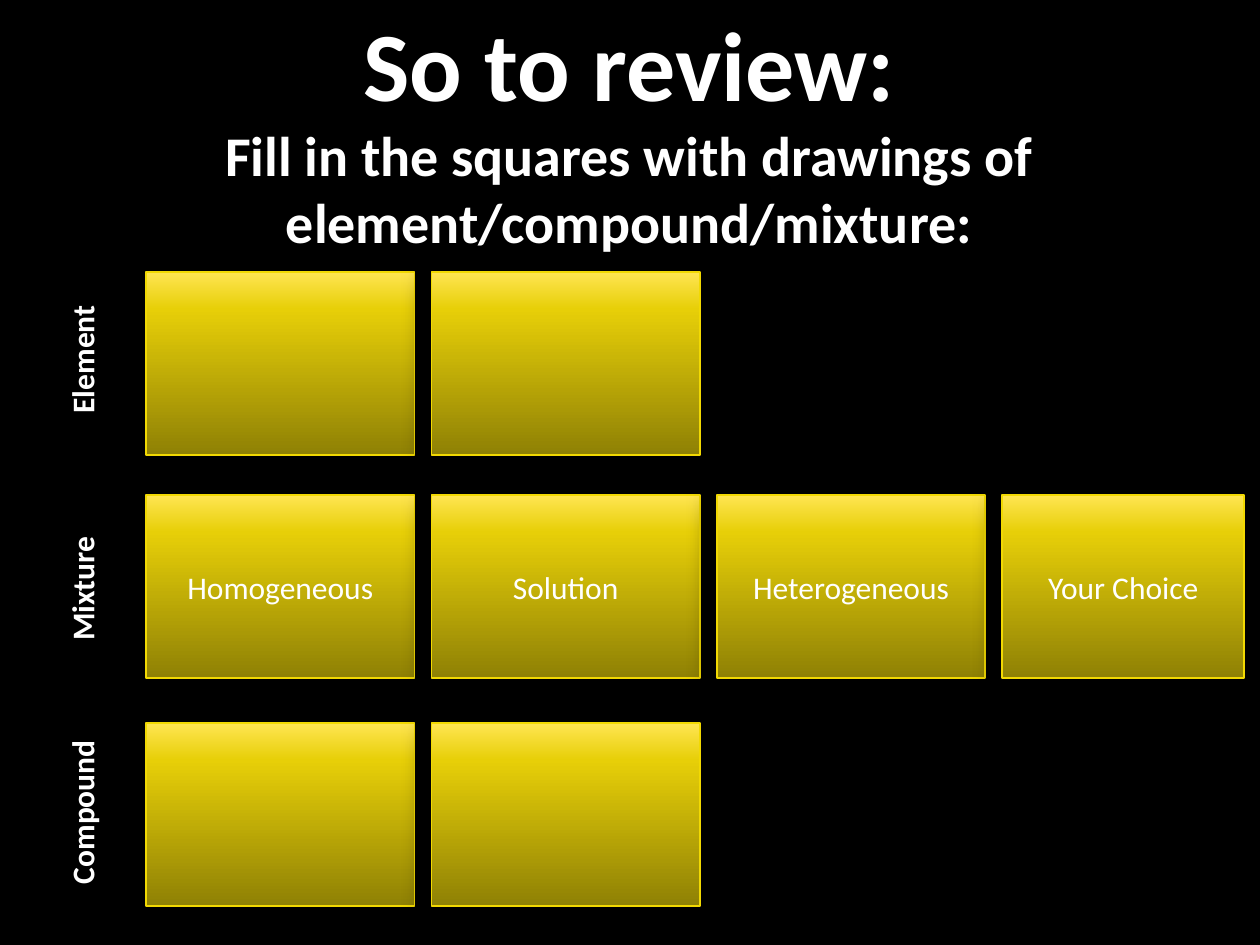
from copy import deepcopy
from lxml.etree import SubElement as Sub
from pptx import Presentation
from pptx.dml.color import RGBColor
from pptx.enum.shapes import MSO_SHAPE as Shape
from pptx.enum.text import MSO_ANCHOR as Anchor, MSO_AUTO_SIZE as Fit, PP_ALIGN as Align
from pptx.oxml.ns import qn
from pptx.util import Inches, Pt


def color(code):
    return RGBColor.from_string(code)


class Deck:
    face = "Calibri"
    ink = "FFFFFF"
    back = "000000"
    edge = "F2D902"
    stops = [(0, "8F8105"), (0.8, "E7CF08"), (1, "FFE552")]

    def __init__(self, slide):
        self.slide = slide
        fill = slide.background.fill
        fill.solid()
        fill.fore_color.rgb = color(self.back)

    def style(self, font, size, bold=False):
        font.name = self.face
        font.size = Pt(size)
        font.bold = bold
        font.color.rgb = color(self.ink)

    def title(self, head, task):
        box = self.slide.shapes.title
        box.left, box.top = Inches(0.85), Inches(0.12)
        box.width, box.height = Inches(8.29), Inches(1.81)
        frame = box.text_frame
        frame.auto_size = Fit.NONE
        frame.word_wrap = True
        frame.vertical_anchor = Anchor.MIDDLE
        para = frame.paragraphs[0]
        para.alignment = Align.CENTER
        run = para.add_run()
        run.text = head
        self.style(run.font, 56, True)
        para.add_line_break()
        run = para.add_run()
        run.text = task
        self.style(run.font, 32, True)

    def label(self, text, mid, width):
        high = 0.4
        box = self.slide.shapes.add_textbox(
            Inches(0.65 - width / 2), Inches(mid - high / 2), Inches(width), Inches(high))
        box.rotation = 270
        frame = box.text_frame
        frame.word_wrap = False
        frame.auto_size = Fit.SHAPE_TO_FIT_TEXT
        para = frame.paragraphs[0]
        para.text = text
        self.style(para.font, 18, True)

    def cell(self, text, left, top, width):
        box = self.slide.shapes.add_shape(
            Shape.RECTANGLE, Inches(left), Inches(top), Inches(width), Inches(1.45))
        self.shade(box)
        box.line.color.rgb = color(self.edge)
        box.line.width = Pt(1)
        self.shadow(box)
        if text:
            frame = box.text_frame
            frame.word_wrap = True
            frame.vertical_anchor = Anchor.MIDDLE
            para = frame.paragraphs[0]
            para.text = text
            para.alignment = Align.CENTER
            self.style(para.font, 18)

    def shade(self, box):
        fill = box.fill
        fill.gradient()
        fill.gradient_angle = 90
        marks = box.element.spPr.find(".//" + qn("a:gsLst"))
        marks.append(deepcopy(marks[-1]))
        for stop, (place, code) in zip(fill.gradient_stops, self.stops):
            stop.position = place
            stop.color.rgb = color(code)

    def shadow(self, box):
        box.shadow.inherit = False
        group = box.element.spPr.find(qn("a:effectLst"))
        cast = Sub(group, qn("a:outerShdw"), blurRad=str(Pt(18)), dist=str(Pt(3)),
                   dir="5400000", rotWithShape="0")
        tint = Sub(cast, qn("a:srgbClr"), val="000000")
        Sub(tint, qn("a:alpha"), val="80000")


def main():
    show = Presentation()
    show.slide_width, show.slide_height = Inches(10), Inches(7.5)
    deck = Deck(show.slides.add_slide(show.slide_layouts[5]))
    deck.title("So to review:",
               "Fill in the squares with drawings of element/compound/mixture:")
    rows = [
        ("Element", 2.83, 1.1, 2.16, ["", ""]),
        ("Mixture", 4.65, 1.07, 3.93,
         ["Homogeneous", "Solution", "Heterogeneous", "Your Choice"]),
        ("Compound", 6.42, 1.39, 5.74, ["", ""]),
    ]
    for name, mid, width, _, _ in rows:
        deck.label(name, mid, width)
    for _, _, _, top, cells in rows:
        for col, text in enumerate(cells):
            deck.cell(text, 1.16 + 2.265 * col, top, 1.92 if col == 3 else 2.13)
    show.save("out.pptx")


if __name__ == "__main__":
    main()
